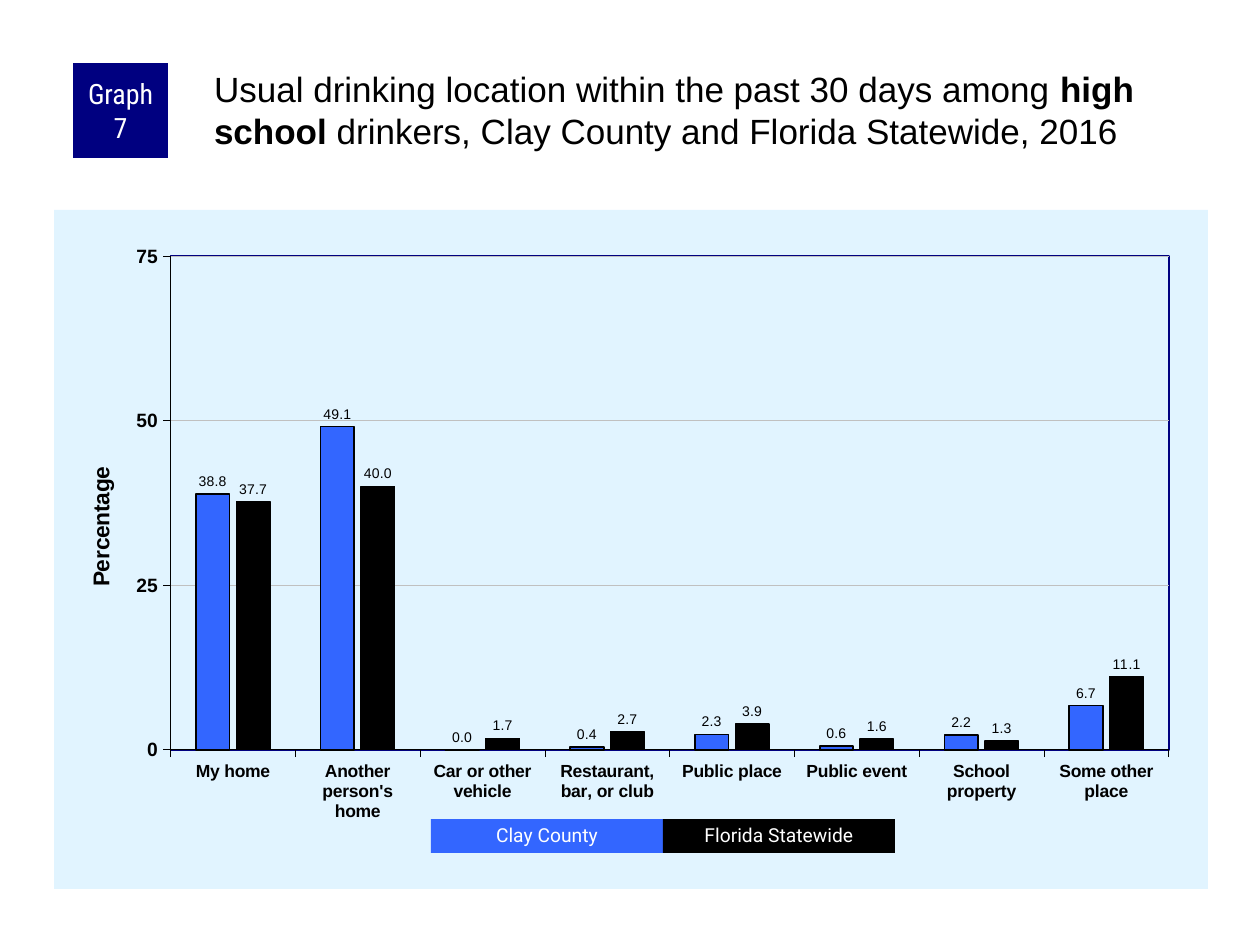
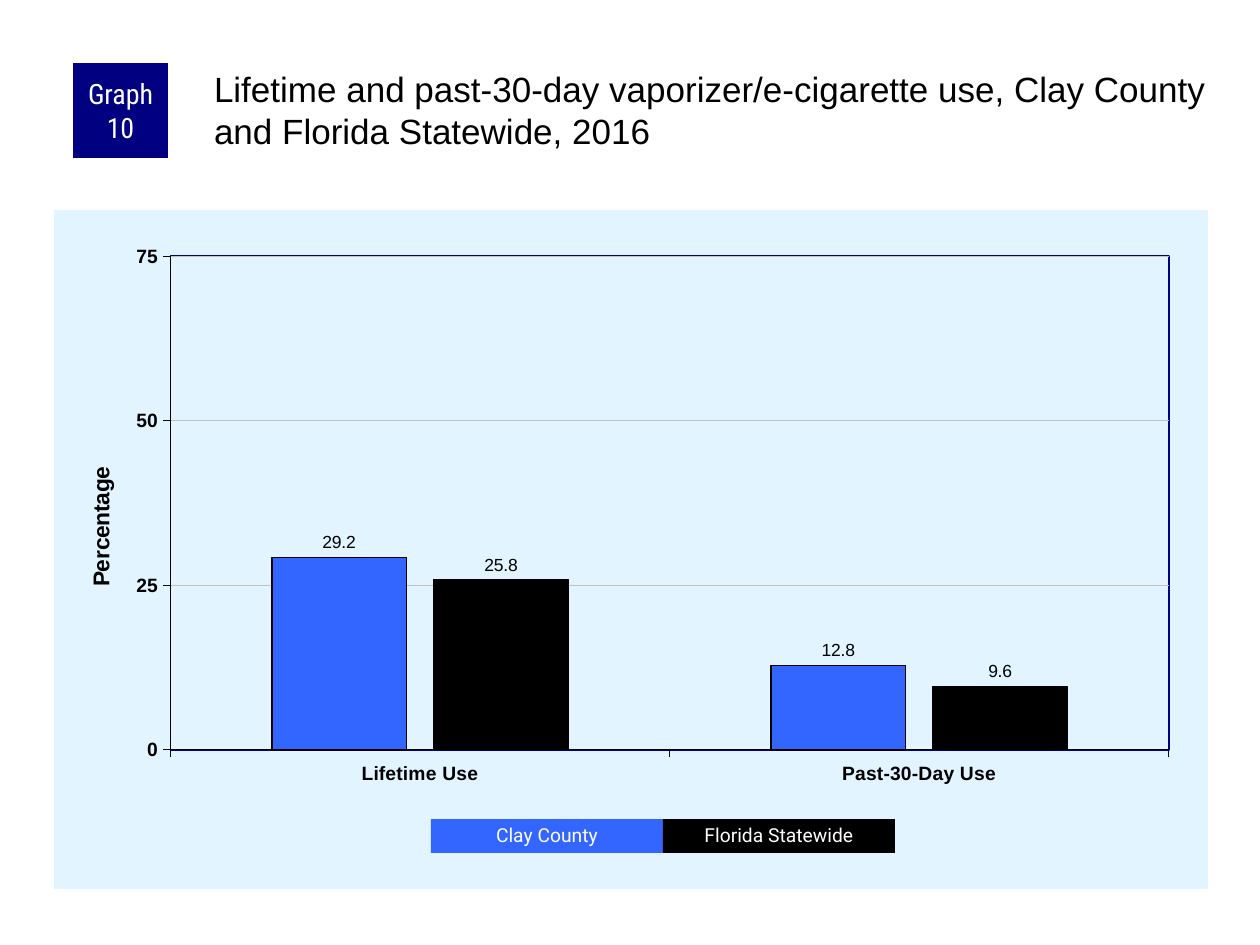
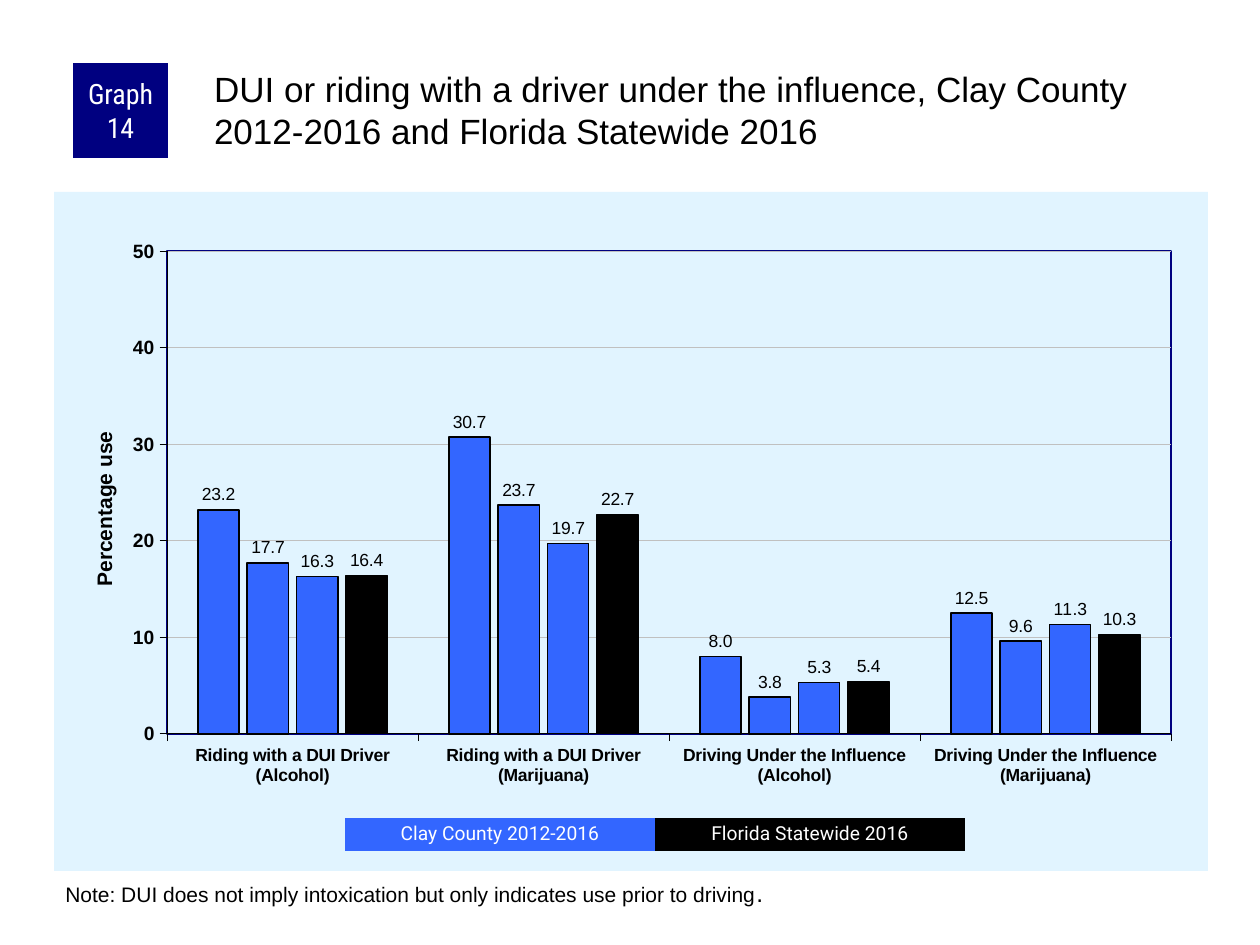
from lxml import etree
from pptx import Presentation
from pptx.chart.data import CategoryChartData
from pptx.dml.color import RGBColor
from pptx.enum.chart import XL_CHART_TYPE, XL_LABEL_POSITION, XL_TICK_MARK
from pptx.enum.shapes import MSO_SHAPE
from pptx.enum.text import MSO_ANCHOR, MSO_AUTO_SIZE, PP_ALIGN
from pptx.oxml import parse_xml
from pptx.oxml.ns import nsdecls, qn
from pptx.util import Emu, Pt

SCALE = 914400 / 126
NAVY, BLUE, BLACK, WHITE = "000080", "3366FF", "000000", "FFFFFF"
PANEL, GRID = "E1F4FF", "C0C0C0"


def style_font(font, size, color=BLACK, bold=False, name="Arial"):
    font.size, font.bold, font.name = Pt(size), bold, name
    font.color.rgb = RGBColor.from_string(color)


def set_layout(element, index, fractions, inner=False):
    for old_layout in element.findall(qn("c:layout")):
        element.remove(old_layout)
    layout = etree.Element(qn("c:layout"))
    manual = etree.SubElement(layout, qn("c:manualLayout"))
    settings = [("layoutTarget", "inner")] if inner else []
    settings += [("xMode", "edge"), ("yMode", "edge")]
    settings += list(zip("xywh", fractions))
    for tag, value in settings:
        etree.SubElement(manual, qn(f"c:{tag}")).set("val", str(value))
    element.insert(index, layout)


places = ["My home", "Another person's home", "Car or other vehicle", "Restaurant, bar, or club",
          "Public place", "Public event", "School property", "Some other place"]
behaviors = ["Riding with a DUI Driver (Alcohol)", "Riding with a DUI Driver (Marijuana)",
             "Driving Under the Influence (Alcohol)", "Driving Under the Influence (Marijuana)"]
upper_plot = (0.101, 0.068, 0.865, 0.727)

graphs = [
    dict(number=7,
         title=[("Usual drinking location within the past 30 days among ", False),
                ("high school", True),
                (" drinkers, Clay County and Florida Statewide, 2016", False)],
         categories=places,
         series=[(BLUE, 1, [38.8, 49.1, 0, 0.4, 2.3, 0.6, 2.2, 6.7]),
                 (BLACK, 0.75, [37.7, 40, 1.7, 2.7, 3.9, 1.6, 1.3, 11.1])],
         chart_top=210, plot=upper_plot, maximum=75, step=25, category_size=10, label_size=8,
         axis_title=("Percentage", 13, (0.025, 0.372)),
         legend=(431, 819, 232, 34), legend_texts=["Clay County", "Florida Statewide"], note=[]),
    dict(number=10,
         title=[("Lifetime and past-30-day vaporizer/e-cigarette use, Clay County "
                 "and Florida Statewide, 2016", False)],
         categories=["Lifetime Use", "Past-30-Day Use"],
         series=[(BLUE, 1, [29.2, 12.8]), (BLACK, 0.75, [25.8, 9.6])],
         chart_top=210, plot=upper_plot, maximum=75, step=25, category_size=11, label_size=10,
         axis_title=("Percentage", 13, (0.025, 0.372)),
         legend=(431, 819, 232, 34), legend_texts=["Clay County", "Florida Statewide"], note=[]),
    dict(number=14,
         title=[("DUI or riding with a driver under the influence, Clay County "
                 "2012-2016 and Florida Statewide 2016", False)],
         categories=behaviors,
         series=[(BLUE, 1, [23.2, 30.7, 8, 12.5]), (BLUE, 1, [17.7, 23.7, 3.8, 9.6]),
                 (BLUE, 0.75, [16.3, 19.7, 5.3, 11.3]), (BLACK, 0.75, [16.4, 22.7, 5.4, 10.3])],
         chart_top=192, plot=(0.098, 0.087, 0.87, 0.711), maximum=50, step=10,
         category_size=10, label_size=10,
         axis_title=("Percentage use", 12, (0.029, 0.347)),
         legend=(345, 818, 310, 33),
         legend_texts=["Clay County 2012-2016", "Florida Statewide 2016"],
         note=[("Note: DUI does not imply intoxication but only indicates use prior to driving", 12),
               (".", 14)]),
]

presentation = Presentation()
presentation.slide_width = Emu(round(1260 * SCALE))
presentation.slide_height = Emu(round(945 * SCALE))

for graph in graphs:
    slide = presentation.slides.add_slide(presentation.slide_layouts[5])

    title = slide.shapes.title
    title.left, title.top, title.width, title.height = [
        Emu(round(length * SCALE)) for length in (210, 63, 998, 105)]
    frame = title.text_frame
    frame.auto_size = MSO_AUTO_SIZE.NONE
    frame.word_wrap = True
    frame.vertical_anchor = MSO_ANCHOR.TOP
    frame.margin_left = frame.margin_top = Emu(round(4 * SCALE))
    frame.margin_right = frame.margin_bottom = 0
    paragraph = frame.paragraphs[0]
    paragraph.alignment = PP_ALIGN.LEFT
    for text, bold in graph["title"]:
        run = paragraph.add_run()
        run.text = text
        style_font(run.font, 20, bold=bold)

    chart_data = CategoryChartData(number_format="0.0")
    chart_data.categories = graph["categories"]
    for index, (color, weight, values) in enumerate(graph["series"], 1):
        chart_data.add_series(f"Series {index}", values)
    bounds = [Emu(round(length * SCALE)) for length in (54, graph["chart_top"], 1154, 679)]
    chart = slide.shapes.add_chart(XL_CHART_TYPE.COLUMN_CLUSTERED, *bounds, chart_data).chart
    chart.has_title = chart.has_legend = False
    style_font(chart.font, 11.5)

    plot = chart.plots[0]
    plot.gap_width, plot.overlap, plot.vary_by_categories = 150, -20, False
    for series, (color, weight, values) in zip(plot.series, graph["series"]):
        series.format.fill.solid()
        series.format.fill.fore_color.rgb = RGBColor.from_string(color)
        series.format.line.color.rgb = RGBColor.from_string(BLACK)
        series.format.line.width = Pt(weight)
        labels = series.data_labels
        labels.show_value = True
        labels.number_format, labels.number_format_is_linked = "0.0", False
        labels.position = XL_LABEL_POSITION.OUTSIDE_END
        style_font(labels.font, graph["label_size"])

    value_axis = chart.value_axis
    for axis, size in ((chart.category_axis, graph["category_size"]), (value_axis, 11)):
        axis.major_tick_mark, axis.minor_tick_mark = XL_TICK_MARK.OUTSIDE, XL_TICK_MARK.NONE
        axis.format.line.color.rgb = RGBColor.from_string(BLACK)
        axis.format.line.width = Pt(0.25)
        style_font(axis.tick_labels.font, size, bold=True)
    value_axis.minimum_scale, value_axis.maximum_scale = 0, graph["maximum"]
    value_axis.major_unit = graph["step"]
    value_axis.tick_labels.number_format = "0"
    value_axis.tick_labels.number_format_is_linked = False
    value_axis.major_gridlines.format.line.color.rgb = RGBColor.from_string(GRID)
    value_axis.major_gridlines.format.line.width = Pt(0.25)

    text, size, place = graph["axis_title"]
    axis_title = value_axis.axis_title
    run = axis_title.text_frame.paragraphs[0].add_run()
    run.text = text
    style_font(run.font, size, bold=True)
    axis_title.text_frame._txBody.bodyPr.set("rot", "-5400000")
    set_layout(axis_title._element, 1, place)

    chart_element = chart._chartSpace.find(qn("c:chart"))
    plot_area = chart_element.find(qn("c:plotArea"))
    set_layout(plot_area, 0, graph["plot"], inner=True)
    plot_area.append(parse_xml(
        f'<c:spPr {nsdecls("c", "a")}><a:noFill/><a:ln w="12700"><a:solidFill>'
        f'<a:srgbClr val="{NAVY}"/></a:solidFill></a:ln></c:spPr>'))
    chart_element.addnext(parse_xml(
        f'<c:spPr {nsdecls("c", "a")}><a:solidFill><a:srgbClr val="{PANEL}"/></a:solidFill>'
        '<a:ln><a:noFill/></a:ln></c:spPr>'))

    left, top, width, height = graph["legend"]
    boxes = [(f"Graph {graph['number']}", NAVY, (73, 63, 95, 95), 16, "Roboto Condensed", 1)]
    for index, (text, color) in enumerate(zip(graph["legend_texts"], (BLUE, BLACK))):
        boxes.append((text, color, (left + index * width, top, width, height), 11, "Roboto", 0.9))
    for text, color, place, size, font_name, spacing in boxes:
        box = slide.shapes.add_shape(
            MSO_SHAPE.RECTANGLE, *[Emu(round(length * SCALE)) for length in place])
        box.shadow.inherit = False
        box.fill.solid()
        box.fill.fore_color.rgb = RGBColor.from_string(color)
        box.line.fill.background()
        frame = box.text_frame
        frame.word_wrap = True
        frame.vertical_anchor = MSO_ANCHOR.MIDDLE
        frame.margin_left = frame.margin_right = Emu(round(6 * SCALE))
        frame.margin_top = frame.margin_bottom = 0
        paragraph = frame.paragraphs[0]
        paragraph.alignment = PP_ALIGN.CENTER
        paragraph.line_spacing = spacing
        run = paragraph.add_run()
        run.text = text
        style_font(run.font, size, WHITE, name=font_name)

    if graph["note"]:
        note = slide.shapes.add_textbox(
            *[Emu(round(length * SCALE)) for length in (53, 872, 1156, 43)])
        note.text_frame.word_wrap = True
        for text, size in graph["note"]:
            run = note.text_frame.paragraphs[0].add_run()
            run.text = text
            style_font(run.font, size)

presentation.save("out.pptx")
